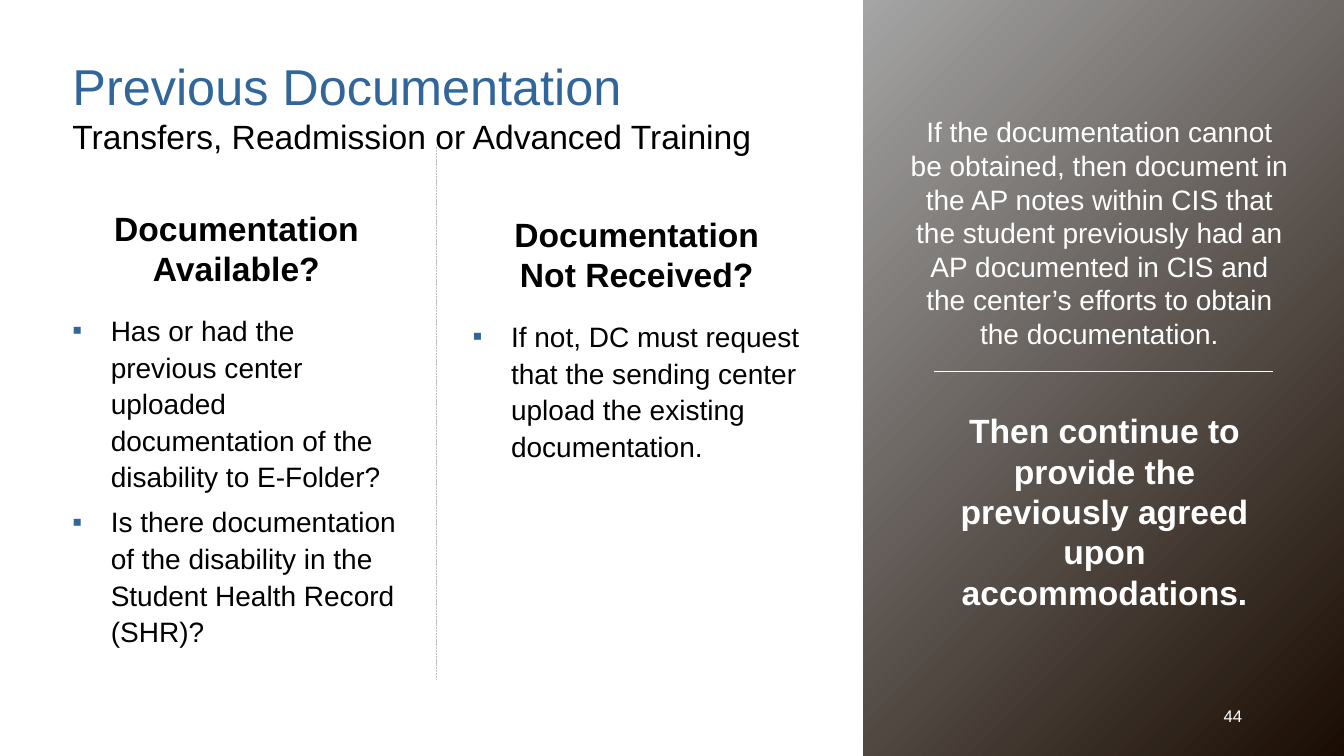
from dataclasses import dataclass

from lxml.etree import SubElement
from pptx import Presentation
from pptx.dml.color import RGBColor
from pptx.enum.dml import MSO_LINE
from pptx.enum.shapes import MSO_CONNECTOR, MSO_SHAPE
from pptx.enum.text import MSO_AUTO_SIZE, PP_ALIGN
from pptx.oxml.ns import qn
from pptx.util import Inches, Pt


@dataclass(frozen=True)
class Theme:
    font: str = "Arial"
    blue: str = "32669A"
    black: str = "000000"
    white: str = "FFFFFF"
    divider: str = "BFBFBF"
    panel_dark: str = "1A0C02"
    panel_light: str = "A5A5A5"
    title: int = 36
    heading: int = 24
    body: int = 20
    number: int = 12


THEME = Theme()


def rgb(color):
    return RGBColor.from_string(color)


def add_bullet(paragraph, indent=0.38):
    properties = paragraph._p.get_or_add_pPr()
    properties.set("marL", str(Inches(indent)))
    properties.set("indent", str(-Inches(indent)))
    color = SubElement(properties, qn("a:buClr"))
    SubElement(color, qn("a:srgbClr"), val=THEME.blue)
    SubElement(properties, qn("a:buFont"), typeface=THEME.font)
    SubElement(properties, qn("a:buChar"), char="▪")


def add_text(frame, text, size=THEME.body, color=THEME.black, bold=False,
             align=PP_ALIGN.LEFT, bullet=False):
    """Write one paragraph, using the frame's empty first one if it is free."""
    first = frame.paragraphs[0]
    paragraph = frame.add_paragraph() if first.runs else first
    paragraph.alignment = align
    if bullet:
        paragraph.line_spacing = 1.09
        paragraph.space_before = Pt(6)
        add_bullet(paragraph)
    run = paragraph.add_run()
    run.text = text
    font = run.font
    font.name, font.size, font.bold = THEME.font, Pt(size), bold
    font.color.rgb = rgb(color)


def add_frame(slide, left, top, width, height, grow=True):
    box = slide.shapes.add_textbox(*map(Inches, (left, top, width, height)))
    frame = box.text_frame
    frame.word_wrap = True
    frame.auto_size = MSO_AUTO_SIZE.SHAPE_TO_FIT_TEXT if grow else MSO_AUTO_SIZE.NONE
    return frame


def add_line(slide, start, end, color, dash=None):
    line = slide.shapes.add_connector(MSO_CONNECTOR.STRAIGHT, *map(Inches, start + end))
    line.line.color.rgb = rgb(color)
    line.line.width = Pt(0.5)
    if dash:
        line.line.dash_style = dash
    SubElement(line._element.spPr, qn("a:effectLst"))


def add_title(slide, left, top, width, height):
    frame = add_frame(slide, left, top, width, height)
    add_text(frame, "Previous Documentation", size=THEME.title, color=THEME.blue)
    add_text(frame, "Transfers, Readmission or Advanced Training", size=THEME.heading)


def add_column(slide, left, top, width, height, heading, bullets):
    # Heading centred over its list
    heading_width, body_offset = 2.76, 1.02
    heading_left = left + (width - heading_width) / 2
    frame = add_frame(slide, heading_left, top, heading_width, 0.91)
    add_text(frame, heading, size=THEME.heading, bold=True, align=PP_ALIGN.CENTER)
    # Bulleted list
    frame = add_frame(slide, left, top + body_offset, width, height - body_offset)
    for bullet in bullets:
        add_text(frame, bullet, bullet=True)


def add_side_panel(slide, left, top, width, height):
    # Gradient background
    panel = slide.shapes.add_shape(
        MSO_SHAPE.RECTANGLE, *map(Inches, (left, top, width, height)))
    panel.shadow.inherit = False
    panel.line.fill.background()
    panel.fill.gradient()
    panel.fill.gradient_angle = 135
    for stop, color in zip(panel.fill.gradient_stops,
                           (THEME.panel_dark, THEME.panel_light)):
        stop.color.rgb = rgb(color)

    # Note, rule and conclusion
    frame = add_frame(slide, left + 0.36, top + 1.09, 3.97, 2.46)
    add_text(frame, "If the documentation cannot be obtained, then document in the AP "
             "notes within CIS that the student previously had an AP documented in CIS "
             "and the center’s efforts to obtain the documentation.",
             color=THEME.white, align=PP_ALIGN.CENTER)
    rule_top = top + 3.68
    add_line(slide, (left + 0.7, rule_top), (left + 4.07, rule_top), THEME.white)
    frame = add_frame(slide, left + 0.63, top + 4.02, 3.53, 2.12)
    add_text(frame, "Then continue to provide the previously agreed upon accommodations.",
             size=THEME.heading, color=THEME.white, bold=True, align=PP_ALIGN.CENTER)

    # Slide number
    frame = add_frame(slide, left + 0.86, top + height - 0.55, 3, 0.4, grow=False)
    add_text(frame, "44", size=THEME.number, color=THEME.white, align=PP_ALIGN.RIGHT)


def main():
    presentation = Presentation()
    presentation.slide_width, presentation.slide_height = Inches(13.33), Inches(7.5)
    slide = presentation.slides.add_slide(presentation.slide_layouts[6])

    add_title(slide, 0.62, 0.5, 7.48, 1.11)
    add_column(slide, 0.62, 2.01, 3.45, 4.48, "Documentation Available?", [
        "Has or had the previous center uploaded documentation of the disability "
        "to E-Folder?",
        "Is there documentation of the disability in the Student Health Record (SHR)?",
    ])
    add_line(slide, (4.33, 1.46), (4.33, 6.74), THEME.divider, MSO_LINE.SQUARE_DOT)
    add_column(slide, 4.59, 2.07, 3.45, 2.56, "Documentation Not Received?", [
        "If not, DC must request that the sending center upload the existing "
        "documentation.",
    ])
    add_side_panel(slide, 8.56, 0, 4.77, 7.5)

    presentation.save("out.pptx")


if __name__ == "__main__":
    main()
